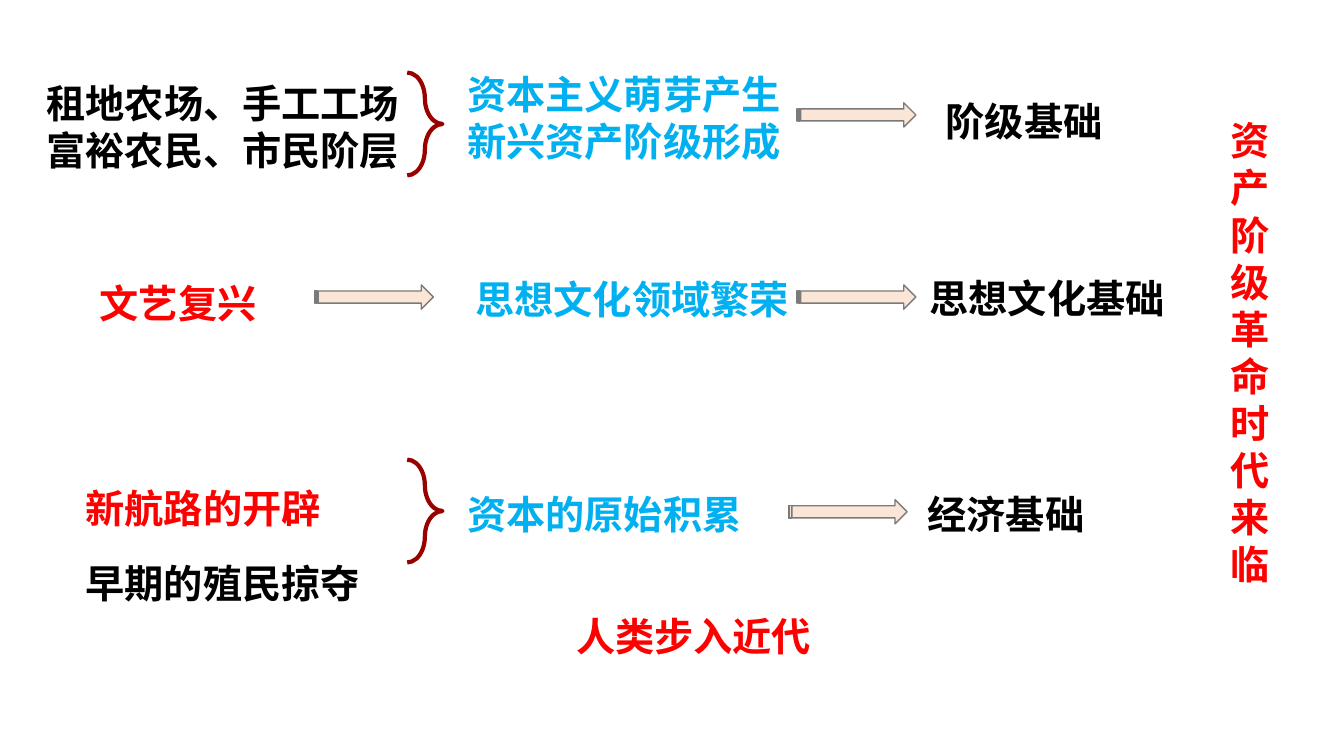
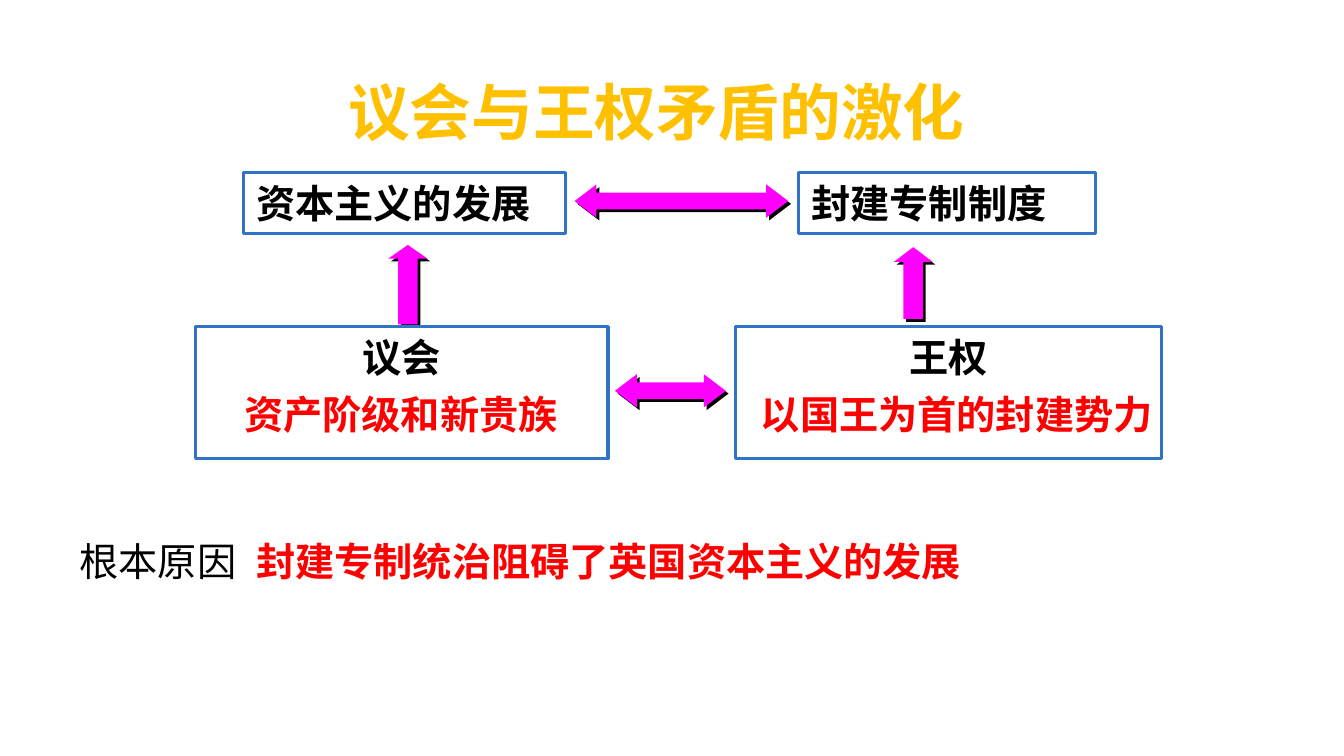
from lxml import etree
from pptx import Presentation
from pptx.dml.color import RGBColor
from pptx.enum.shapes import MSO_SHAPE as SHAPE
from pptx.enum.text import MSO_ANCHOR as ANCHOR, PP_ALIGN as ALIGN
from pptx.oxml.ns import qn
from pptx.util import Inches, Pt

# Shared style
FONT, LATIN = "Noto Sans CJK SC", "Calibri"
BLACK, RED, BLUE, GOLD = "000000", "FF0000", "00B0F0", "FFC000"
WHITE, FRAME, MAGENTA = "FFFFFF", "3174C5", "FF00FF"
BRACE, PEACH, GREY = "990000", "FBE5D6", "7A7A7A"
WIDTH, HEIGHT = Inches(13.33), Inches(7.5)
LINE_H = 8.1          # height of a one-line box, in percent of the slide
TWO_LINE_H = 14.4


def color(value):
    return RGBColor.from_string(value)


def area(x, y, w, h):
    """Turn percent of the slide's size into lengths."""
    return [int(share * full / 100)
            for share, full in zip((x, y, w, h), (WIDTH, HEIGHT) * 2)]


def write(s, lines, ink=BLACK, size=28, align=ALIGN.LEFT, bold=True,
          font=FONT, spacing=None):
    """Fill a shape with paragraphs; a line is a text or a (text, ink) pair."""
    tf = s.text_frame
    tf.word_wrap = True
    tf.vertical_anchor = ANCHOR.TOP
    tf.margin_left = tf.margin_right = Inches(0.13)
    tf.margin_top = tf.margin_bottom = Inches(0.07)
    for i, line in enumerate(lines):
        text, line_ink = (line, ink) if isinstance(line, str) else line
        p = tf.add_paragraph() if i else tf.paragraphs[0]
        p.text, p.alignment = text, align
        if spacing:
            p.line_spacing = Pt(spacing)
        # Runs carry the font too, for viewers that skip paragraph defaults
        for f in (p.font, p.runs[0].font):
            f.name, f.size, f.bold = font, Pt(size), bold
            f.color.rgb = color(line_ink)
        for tag in (p._p.pPr.find(qn("a:defRPr")), p.runs[0]._r.rPr):
            etree.SubElement(tag, qn("a:ea"), typeface=FONT)


def label(slide, box, *lines, **style):
    write(slide.shapes.add_textbox(*area(*box)), lines, **style)


def shape(slide, kind, box, fill=None, line=None, width=1, adj=()):
    s = slide.shapes.add_shape(kind, *area(*box))
    s.shadow.inherit = False
    if fill:
        s.fill.solid()
        s.fill.fore_color.rgb = color(fill)
    else:
        s.fill.background()
    if line:
        s.line.color.rgb = color(line)
        s.line.width = Pt(width)
    else:
        s.line.fill.background()
    for i, value in enumerate(adj):
        s.adjustments[i] = value
    return s


def framed(slide, box, text, align=ALIGN.LEFT):
    write(shape(slide, SHAPE.RECTANGLE, box, WHITE, FRAME, 2.25), [text],
          align=align)


def shadow_arrow(slide, kind, box, head):
    s = shape(slide, kind, box, MAGENTA, adj=(0.5, head))
    effects = s._element.spPr.find(qn("a:effectLst"))
    shadow = etree.SubElement(effects, qn("a:outerShdw"), blurRad="0",
                              dist=str(Pt(2.8)), dir="2700000",
                              algn="ctr", rotWithShape="0")
    etree.SubElement(shadow, qn("a:srgbClr"), val=BLACK)


def revolution_slide(slide):
    # Causes
    label(slide, (2.5, 9.6, 28.4, TWO_LINE_H), "租地农场、手工工场", "富裕农民、市民阶层")
    label(slide, (6.45, 32.4, 13.9, 11.7), "文艺复兴", ink=RED, spacing=53.4)
    label(slide, (5.4, 59.5, 30.2, 21.6), ("新航路的开辟", RED), "早期的殖民掠夺",
          spacing=53.4)

    # Results
    label(slide, (33.8, 8.3, 25.7, TWO_LINE_H), "资本主义萌芽产生", "新兴资产阶级形成",
          ink=BLUE)
    label(slide, (34.4, 35.5, 25.45, LINE_H), "思想文化领域繁荣", ink=BLUE)
    label(slide, (33.8, 63.9, 24.9, LINE_H), "资本的原始积累", ink=BLUE)

    # Foundations
    label(slide, (69.4, 8.3, 13.9, 11.7), "阶级基础", spacing=53.4)
    label(slide, (68.2, 31.7, 19.8, 11.7), "思想文化基础", spacing=53.4)
    label(slide, (65.7, 63.9, 18.3, LINE_H), "经济基础", align=ALIGN.CENTER)

    # Conclusions; the narrow box stacks its characters
    label(slide, (90.6, 14.5, 3.45, 71.1), "资产阶级革命时代来临", ink=RED,
          align=ALIGN.CENTER)
    label(slide, (33.8, 80, 35.6, 17.5), "人类步入近代", ink=RED,
          align=ALIGN.CENTER)

    # Braces and arrows
    for y in (9.6, 60.8):
        shape(slide, SHAPE.RIGHT_BRACE, (30.3, y, 2.63, 13.6), line=BRACE,
              width=3, adj=(0.727, 0.5))
    for x, y in ((59.3, 13.6), (58.65, 66.1), (59.3, 37.7), (23.4, 37.7)):
        shape(slide, SHAPE.STRIPED_RIGHT_ARROW, (x, y, 8.85, 3.2), PEACH, GREY)


def conflict_slide(slide):
    label(slide, (22.35, 8.8, 53, 11.6), "议会与王权矛盾的激化", ink=GOLD, size=44,
          align=ALIGN.CENTER)

    # Arrows
    shadow_arrow(slide, SHAPE.UP_ARROW, (28.9, 32.4, 2.9, 10.5), 0.35)
    shadow_arrow(slide, SHAPE.UP_ARROW, (66.5, 32.7, 2.9, 9.5), 0.38)
    for x, y, w in ((42.75, 24.4, 15.9), (45.75, 49.5, 8.25)):
        shadow_arrow(slide, SHAPE.LEFT_RIGHT_ARROW, (x, y, w, 4.4), 0.66)

    # Systems above, their supporters below
    framed(slide, (18.1, 22.8, 24, LINE_H), "资本主义的发展")
    framed(slide, (59.4, 22.8, 22.1, LINE_H), "封建专制制度")
    framed(slide, (14.55, 43.2, 30.7, 17.5), "议会", ALIGN.CENTER)
    framed(slide, (54.75, 43.2, 31.7, 17.5), "王权", ALIGN.CENTER)
    label(slide, (17.2, 50.7, 25.45, LINE_H), "资产阶级和新贵族", ink=RED)
    label(slide, (55.65, 50.7, 31.3, LINE_H), "以国王为首的封建势力", ink=RED)

    # Root cause
    label(slide, (4.95, 70.1, 13.8, LINE_H), "根本原因", bold=False, font=LATIN)
    label(slide, (18.1, 70.1, 55.3, LINE_H), "封建专制统治阻碍了英国资本主义的发展",
          ink=RED, font=LATIN)


def main():
    prs = Presentation()
    prs.slide_width, prs.slide_height = WIDTH, HEIGHT
    for build in (revolution_slide, conflict_slide):
        build(prs.slides.add_slide(prs.slide_layouts[6]))
    prs.save("out.pptx")


if __name__ == "__main__":
    main()
